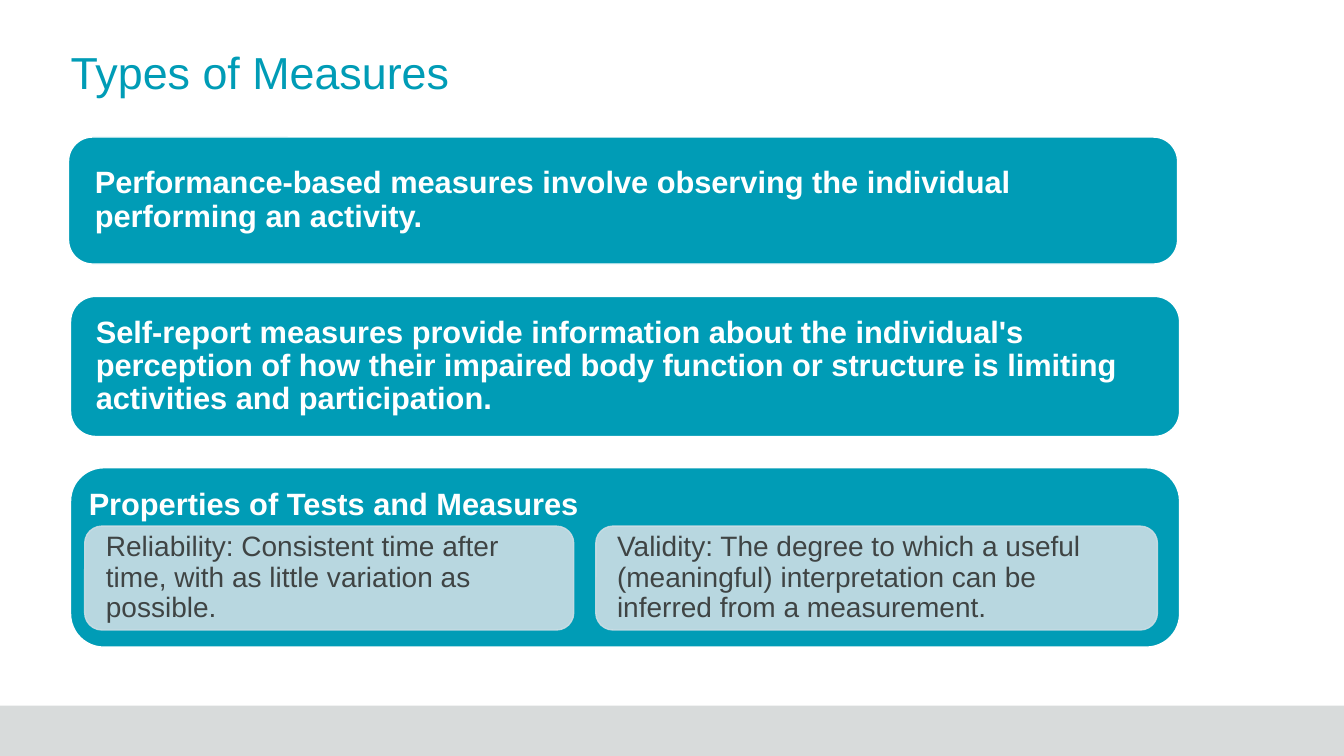
from lxml.etree import SubElement
from pptx import Presentation
from pptx.dml.color import RGBColor
from pptx.enum.shapes import MSO_SHAPE
from pptx.enum.text import MSO_ANCHOR, MSO_AUTO_SIZE, PP_ALIGN
from pptx.oxml.ns import qn
from pptx.util import Inches, Pt

TEAL, PALE, WHITE, INK, GREY = "009CB6", "CCDEE5", "FFFFFF", "3F4444", "D8DBDB"
CORNER_TEXT_INSET = 0.29


def color(hex_string):
    return RGBColor.from_string(hex_string)


def write(frame, text, size, hex_color, bold=False, anchor=MSO_ANCHOR.MIDDLE, insets=(0, 0, 0, 0)):
    frame.word_wrap = True
    frame.auto_size = MSO_AUTO_SIZE.NONE
    frame.vertical_anchor = anchor
    frame.margin_left, frame.margin_top, frame.margin_right, frame.margin_bottom = map(Inches, insets)
    paragraph = frame.paragraphs[0]
    paragraph.alignment = PP_ALIGN.LEFT
    paragraph.line_spacing = 0.9
    run = paragraph.add_run()
    run.text = text
    run.font.name = "Arial"
    run.font.size = Pt(size)
    run.font.bold = bold
    run.font.color.rgb = color(hex_color)


class SlideBuilder:
    def __init__(self, presentation):
        self.slide = presentation.slides.add_slide(presentation.slide_layouts[5])

    def title(self, text, left, top, width, height):
        shape = self.slide.shapes.title
        shape.left, shape.top, shape.width, shape.height = map(Inches, (left, top, width, height))
        write(shape.text_frame, text, 32, TEAL, anchor=MSO_ANCHOR.TOP)

    def block(self, kind, bounds, fill):
        shape = self.slide.shapes.add_shape(kind, *map(Inches, bounds))
        shape.shadow.inherit = False
        shape.fill.solid()
        shape.fill.fore_color.rgb = color(fill)
        shape.line.fill.background()
        return shape

    def card(self, text, bounds, radius, insets, fill=TEAL, line=WHITE, size=22,
             text_color=WHITE, bold=True, opacity=100):
        shape = self.block(MSO_SHAPE.ROUNDED_RECTANGLE, bounds, fill)
        shape.adjustments[0] = radius / min(bounds[2:])
        shape.line.color.rgb = color(line)
        shape.line.width = Pt(1)
        if opacity < 100:
            for element in shape.element.spPr.iter(qn("a:srgbClr")):
                SubElement(element, qn("a:alpha"), val=str(opacity * 1000))
        insets = [inset - CORNER_TEXT_INSET * radius for inset in insets]
        write(shape.text_frame, text, size, text_color, bold, insets=insets)

    def panel(self, text, left, width):
        self.card(text, (left, 5.22, width, 1.03), 0.17, (0.21, 0.08, 0.21, 0.08),
                  fill=PALE, line=PALE, size=20, text_color=INK, bold=False, opacity=90)


def main():
    presentation = Presentation()
    presentation.slide_width = Inches(13.33)
    presentation.slide_height = Inches(7.5)
    builder = SlideBuilder(presentation)
    builder.block(MSO_SHAPE.RECTANGLE, (0, 7, 13.33, 0.5), GREY)
    builder.title("Types of Measures", 0.7, 0.5, 11, 1)
    builder.card("Properties of Tests and Measures",
                 (0.7, 4.64, 11, 1.78), 0.33, (0.18, 0.18, 0.18, 1.21))
    builder.panel("Reliability: Consistent time after time, with as little variation as possible.",
                  0.84, 4.85)
    builder.panel("Validity: The degree to which a useful (meaningful) interpretation "
                  "can be inferred from a measurement.", 5.91, 5.57)
    builder.card("Self-report measures provide information about the individual's perception of how "
                 "their impaired body function or structure is limiting activities and participation.",
                 (0.7, 2.94, 11, 1.39), 0.25, (0.25,) * 4)
    builder.card("Performance-based measures involve observing the individual performing an activity.",
                 (0.68, 1.36, 11, 1.26), 0.24, (0.26,) * 4)
    presentation.save("out.pptx")


if __name__ == "__main__":
    main()
